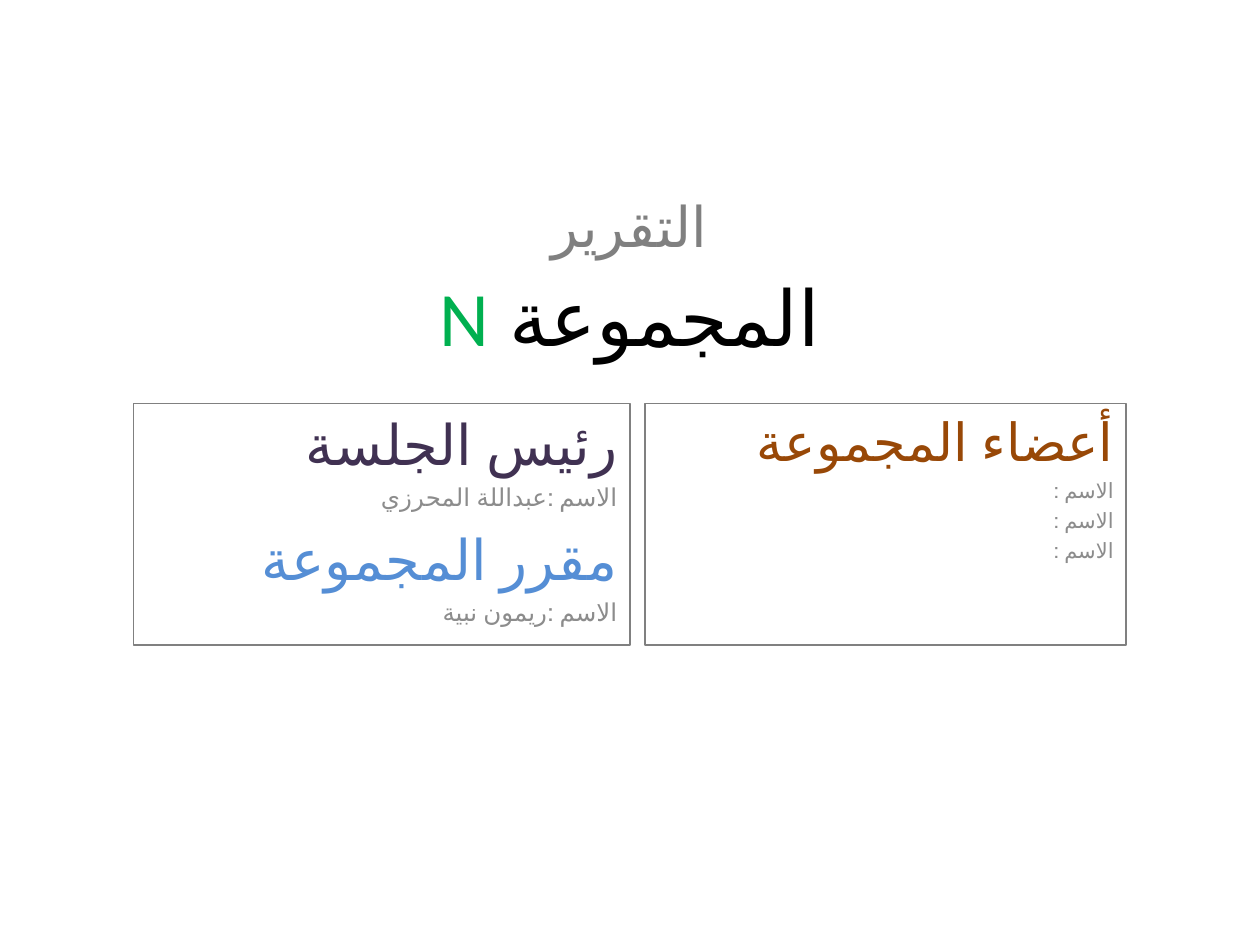
from dataclasses import dataclass

from pptx import Presentation
from pptx.dml.color import RGBColor
from pptx.enum.lang import MSO_LANGUAGE_ID
from pptx.enum.shapes import MSO_SHAPE
from pptx.enum.text import MSO_ANCHOR, PP_ALIGN
from pptx.util import Pt

RECTANGLE = MSO_SHAPE.RECTANGLE
TOP, MIDDLE = MSO_ANCHOR.TOP, MSO_ANCHOR.MIDDLE
CENTER, RIGHT = PP_ALIGN.CENTER, PP_ALIGN.RIGHT
ARABIC = MSO_LANGUAGE_ID.ARABIC
BLANK_LAYOUT = 6


@dataclass(frozen=True)
class Theme:
    font: str = "Calibri"
    title: str = "000000"
    group_letter: str = "00B050"
    report: str = "808080"
    border: str = "808080"
    chair: str = "403152"
    rapporteur: str = "558ED5"
    members: str = "984807"
    name: str = "8C8C8C"
    title_size: int = 44
    heading_size: int = 32
    members_size: int = 30
    name_size: int = 14
    member_name_size: int = 12
    spacing: float = 0.23


THEME = Theme()


def add_text(frame, *runs, size, align=RIGHT, rtl=True):
    """Add one paragraph made of (text, colour) runs."""
    paragraph = frame.paragraphs[0]
    if paragraph.runs:
        paragraph = frame.add_paragraph()
        paragraph.space_before = Pt(round(size * THEME.spacing, 1))
    paragraph.alignment = align
    if rtl:
        paragraph._p.get_or_add_pPr().set("rtl", "1")
    for text, color in runs:
        run = paragraph.add_run()
        run.text = text
        run.font.name = THEME.font
        run.font.size = Pt(size)
        run.font.color.rgb = RGBColor.from_string(color)
        run.font.language_id = ARABIC


def add_label(slide, left, top, width, height, anchor=TOP):
    label = slide.shapes.add_textbox(Pt(left), Pt(top), Pt(width), Pt(height))
    frame = label.text_frame
    frame.word_wrap = True
    frame.vertical_anchor = anchor
    return frame


def add_panel(slide, left, width, top=230.4, height=138.24):
    panel = slide.shapes.add_shape(RECTANGLE, Pt(left), Pt(top), Pt(width), Pt(height))
    panel.shadow.inherit = False
    panel.fill.background()
    panel.line.color.rgb = RGBColor.from_string(THEME.border)
    panel.line.width = Pt(0.75)
    frame = panel.text_frame
    frame.word_wrap = True
    frame.vertical_anchor = TOP
    return frame


def main():
    presentation = Presentation()
    presentation.slide_width, presentation.slide_height = Pt(720), Pt(540)
    slide = presentation.slides.add_slide(presentation.slide_layouts[BLANK_LAYOUT])

    title = add_label(slide, 54, 133.92, 612, 92.88, anchor=MIDDLE)
    add_text(title, ("المجموعة ", THEME.title), ("N", THEME.group_letter),
             size=THEME.title_size, align=CENTER)

    officers = add_panel(slide, left=76.32, width=283.68)
    for role, color, name in (
        ("رئيس الجلسة", THEME.chair, "الاسم :عبداللة المحرزي"),
        ("مقرر المجموعة", THEME.rapporteur, "الاسم :ريمون نبية"),
    ):
        add_text(officers, (role, color), size=THEME.heading_size)
        add_text(officers, (name, THEME.name), size=THEME.name_size)

    members = add_panel(slide, left=368.64, width=274.9)
    add_text(members, ("أعضاء المجموعة", THEME.members), size=THEME.members_size)
    for _ in range(3):
        add_text(members, ("الاسم :", THEME.name), size=THEME.member_name_size)

    report = add_label(slide, 76.32, 105.84, 566.64, 62.64)
    add_text(report, ("التقرير", THEME.report), size=THEME.heading_size,
             align=CENTER, rtl=False)

    presentation.save("out.pptx")


if __name__ == "__main__":
    main()
